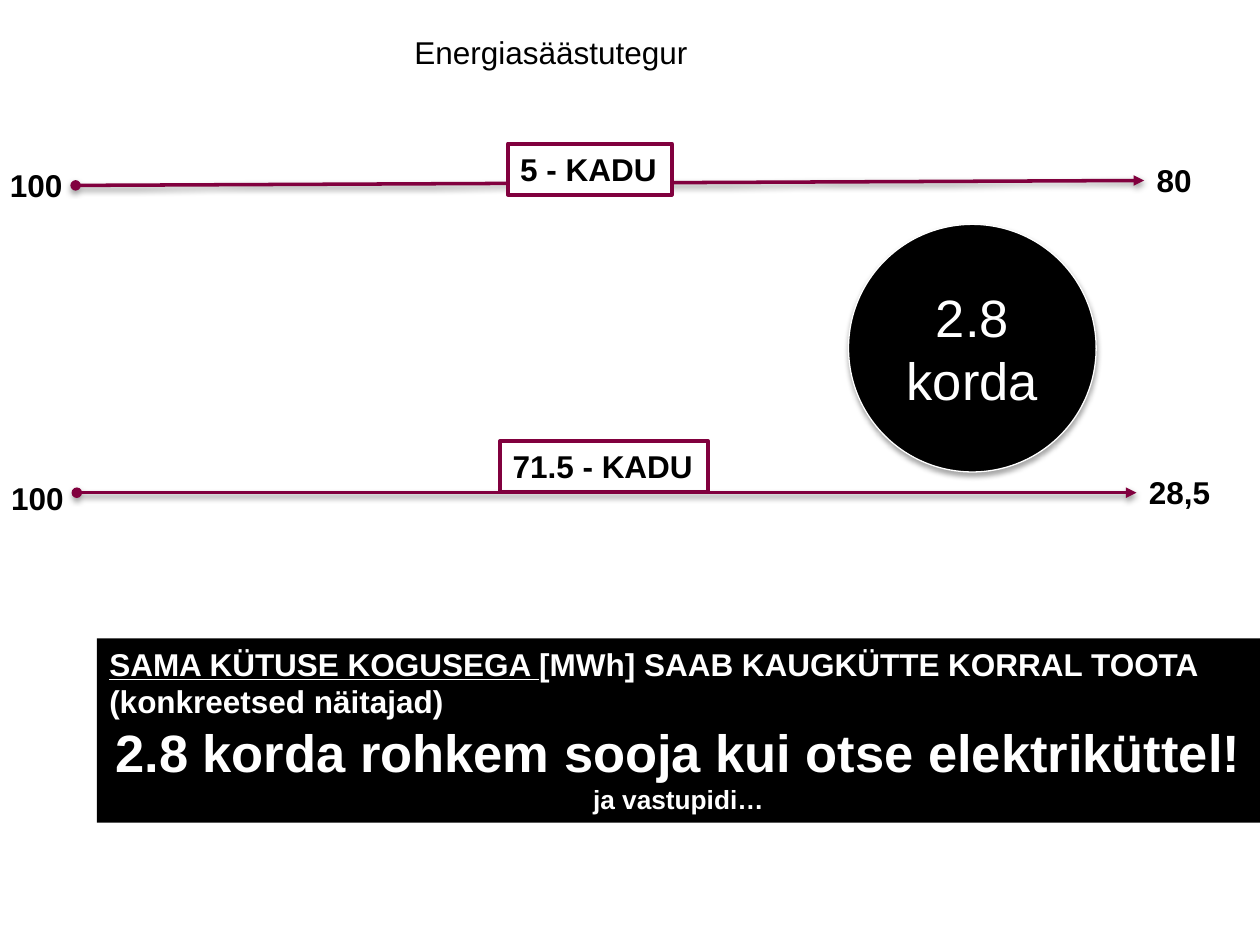
"""Build the slide comparing losses of district and electric heating."""
from lxml import etree
from pptx import Presentation
from pptx import util as u
from pptx.dml.color import RGBColor
from pptx.enum import shapes, text
from pptx.oxml import ns

COLORS = {"ink": "000000", "paper": "FFFFFF", "wine": "81003E"}
FONT = "Arial"
LABEL_H = 29.1

TITLE = ("Energiasäästutegur", (229.7, 15.1, 172.1, LABEL_H))
DISTRICT = {
    "input": ("100", (-1.4, 91.4, 44.6, LABEL_H), False),
    "output": ("80", (653.8, 88.6, 34.6, LABEL_H), False),
    "loss": ("5 - KADU", (290.2, 82.1, 93.6, LABEL_H), False),
}
ELECTRIC = {
    "input": ("100", (-0.7, 270, 56.9, LABEL_H), True),
    "output": ("28,5", (649.4, 267, 49.7, LABEL_H), False),
    "loss": ("71.5 - KADU", (285.8, 252, 118.8, LABEL_H), False),
}
ELECTRIC_START = 43.9
RATIO = ("2.8 korda", (484.9, 128.2, 141.5, 141.5))
SUMMARY_BOX = (55.4, 364.8, 664.6, 105.4)
SUMMARY = [
    ("left", 18, [("SAMA KÜTUSE KOGUSEGA ", True),
                  ("[MWh] SAAB KAUGKÜTTE KORRAL TOOTA", False)]),
    ("left", 18, [("(konkreetsed näitajad)", False)]),
    ("center", 30, [("2.8 korda rohkem sooja kui otse elektriküttel!", False)]),
    ("center", 15, [("ja vastupidi…", False)]),
]
ALIGN = {"left": text.PP_ALIGN.LEFT, "center": text.PP_ALIGN.CENTER}


def rgb(name):
    return RGBColor.from_string(COLORS[name])


def points(box):
    return [u.Pt(value) for value in box]


def add_shadow(part, alpha, blur, distance):
    properties = part._element.spPr
    effects = properties.find(ns.qn("a:effectLst"))
    if effects is None:
        effects = etree.SubElement(properties, ns.qn("a:effectLst"))
    shadow = etree.SubElement(
        effects, ns.qn("a:outerShdw"), blurRad=str(u.Pt(blur)),
        dist=str(u.Pt(distance)), dir="5400000", rotWithShape="0")
    color = etree.SubElement(shadow, ns.qn("a:srgbClr"), val=COLORS["ink"])
    etree.SubElement(color, ns.qn("a:alpha"), val=str(alpha * 1000))


def write(part, paragraphs, color, bold=False, wrap=True, grow=True):
    frame = part.text_frame
    frame.word_wrap = wrap
    frame.vertical_anchor = text.MSO_ANCHOR.TOP if grow else text.MSO_ANCHOR.MIDDLE
    if grow:
        frame.auto_size = text.MSO_AUTO_SIZE.SHAPE_TO_FIT_TEXT
    for index, (align, size, runs) in enumerate(paragraphs):
        paragraph = frame.add_paragraph() if index else frame.paragraphs[0]
        paragraph.alignment = ALIGN[align]
        for words, underline in runs:
            run = paragraph.add_run()
            run.text = words
            run.font.name, run.font.size = FONT, u.Pt(size)
            run.font.bold, run.font.underline = bold, underline
            run.font.color.rgb = rgb(color)


def add_panel(slide, kind, box, fill, line=None, width=0):
    panel = slide.shapes.add_shape(kind, *points(box))
    panel.shadow.inherit = False
    panel.fill.solid()
    panel.fill.fore_color.rgb = rgb(fill)
    if line:
        panel.line.color.rgb = rgb(line)
        panel.line.width = u.Pt(width)
    else:
        panel.line.fill.background()
    return panel


def add_label(slide, label, line=None):
    words, box, wrap = label
    panel = add_panel(slide, shapes.MSO_SHAPE.RECTANGLE, box, "paper", line, 2.25)
    write(panel, [("left", 18, [(words, False)])], "ink", bold=True, wrap=wrap)
    return panel


def add_flow(slide, start, target, source=None):
    end_x, end_y = target.left, target.top + target.height // 2
    flow = slide.shapes.add_connector(
        shapes.MSO_CONNECTOR.STRAIGHT, u.Pt(start), end_y, end_x, end_y)
    if source:
        flow.begin_connect(source, 3)
    flow.end_connect(target, 1)
    flow.line.color.rgb = rgb("wine")
    flow.line.width = u.Pt(2)
    stroke = flow.line._get_or_add_ln()
    etree.SubElement(stroke, ns.qn("a:headEnd"), type="oval")
    etree.SubElement(stroke, ns.qn("a:tailEnd"), type="triangle")
    add_shadow(flow, 38, 3.1, 1.6)


def main():
    deck = Presentation()
    deck.slide_width, deck.slide_height = u.Pt(720), u.Pt(540)
    slide = deck.slides.add_slide(deck.slide_layouts[6])

    words, box = TITLE
    title = slide.shapes.add_textbox(*points(box))
    write(title, [("left", 18, [(words, False)])], "ink", wrap=False)

    district_input = add_label(slide, DISTRICT["input"])
    district_output = add_label(slide, DISTRICT["output"])
    add_flow(slide, 0, district_output, district_input)
    add_label(slide, DISTRICT["loss"], "wine")

    add_label(slide, ELECTRIC["input"])
    electric_output = add_label(slide, ELECTRIC["output"])
    add_label(slide, ELECTRIC["loss"], "wine")
    add_flow(slide, ELECTRIC_START, electric_output)

    words, box = RATIO
    ratio = add_panel(slide, shapes.MSO_SHAPE.OVAL, box, "ink", "paper", 0.75)
    add_shadow(ratio, 35, 3.1, 1.8)
    write(ratio, [("center", 30, [(words, False)])], "paper", grow=False)

    summary = add_panel(slide, shapes.MSO_SHAPE.RECTANGLE, SUMMARY_BOX, "ink")
    write(summary, SUMMARY, "paper", bold=True)

    deck.save("out.pptx")


if __name__ == "__main__":
    main()
